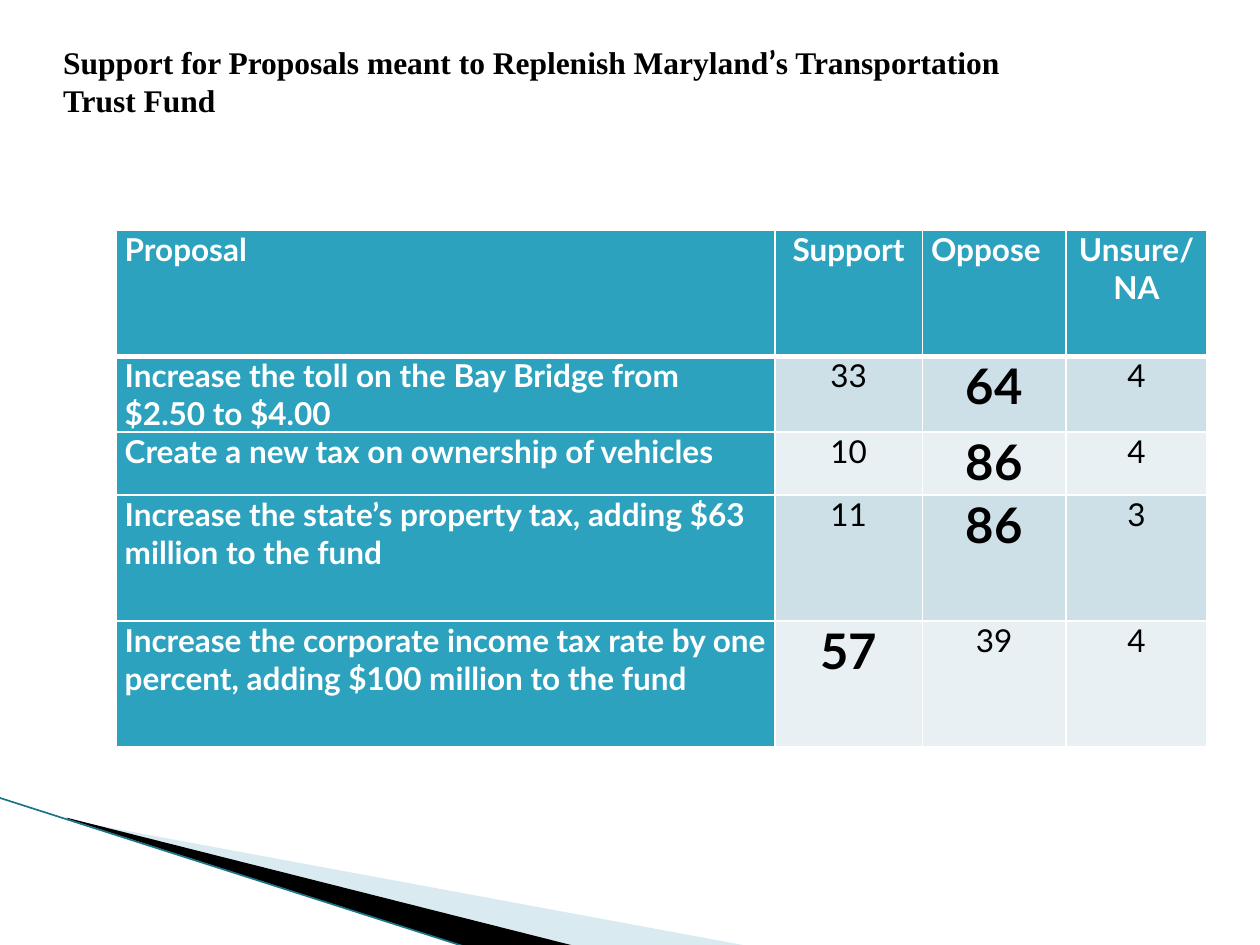
from lxml import etree
from pptx import Presentation
from pptx.dml.color import RGBColor
from pptx.enum.shapes import MSO_CONNECTOR as Connector
from pptx.enum.text import MSO_ANCHOR as Anchor, PP_ALIGN as Align
from pptx.oxml import parse_xml
from pptx.oxml.ns import nsdecls, qn
from pptx.util import Inches, Pt

WHITE = RGBColor(0xFF, 0xFF, 0xFF)
BLACK = RGBColor(0, 0, 0)
TEAL = RGBColor(0x2D, 0xA2, 0xBF)
DARK_TEAL = RGBColor(0x1B, 0x75, 0x87)
PALE_BLUE = RGBColor(0xA0, 0xCB, 0xDC)
BANDS = RGBColor(0xCD, 0xE0, 0xE8), RGBColor(0xE8, 0xF0, 0xF4)

HEADINGS = ("Proposal", "Support", "Oppose", "Unsure/NA")
PROPOSALS = (
    ("Increase the toll on the Bay Bridge from $2.50 to $4.00", 33, 64, 4),
    ("Create a new tax on ownership of vehicles", 10, 86, 4),
    ("Increase the state’s property tax, adding $63 million to the fund", 11, 86, 3),
    ("Increase the corporate income tax rate by one percent, adding $100 million to the fund",
     57, 39, 4),
)
COLUMN_WIDTHS = (5.23, 1.17, 1.14, 1.12)
ROW_HEIGHTS = (1, 0.5, 0.5, 1, 1)


def add_wedge(page, points, color, alpha=100):
    """Draw a closed outline through points in inches, alpha in percent."""
    corners = [(Inches(x), Inches(y)) for x, y in points]
    builder = page.shapes.build_freeform(*corners[0])
    builder.add_line_segments(corners[1:])
    wedge = builder.convert_to_shape()
    wedge.shadow.inherit = False
    wedge.fill.solid()
    wedge.fill.fore_color.rgb = color
    wedge.line.fill.background()
    if alpha < 100:
        tint = wedge.fill._xPr.find(".//" + qn("a:srgbClr"))
        etree.SubElement(tint, qn("a:alpha"), val=str(alpha * 1000))


def add_corner_decoration(page):
    add_wedge(page, [(0.55, 6.51), (5.95, 7.51), (4.56, 7.51), (0.55, 6.5)], PALE_BLUE, 40)
    add_wedge(page, [(0.53, 6.49), (4.57, 7.51), (3.72, 7.52), (0.54, 6.5)], BLACK)
    edge = page.shapes.add_connector(
        Connector.STRAIGHT, Inches(-0.01), Inches(6.33), Inches(3.71), Inches(7.52))
    edge.line.color.rgb = DARK_TEAL
    edge.line.width = Pt(0.95)
    etree.SubElement(edge._element.spPr, qn("a:effectLst"))


def add_title(page, left, top, width, height):
    box = page.shapes.add_textbox(left, top, width, height)
    frame = box.text_frame
    frame.word_wrap = True
    frame.vertical_anchor = Anchor.MIDDLE
    frame.margin_left = frame.margin_right = frame.margin_top = 0
    frame.margin_bottom = Inches(0.45)
    para = frame.paragraphs[0]
    para.font.size = Pt(18)
    para.font.bold = True
    para.font.color.rgb = BLACK
    for text, font in (
        ("Support for Proposals meant to Replenish Maryland", "Times New Roman"),
        ("’", "Lato"),
        ("s Transportation Trust Fund", "Times New Roman"),
    ):
        span = para.add_run()
        span.text = text
        span.font.name = font


def set_borders(cell, top, bottom):
    """Give the cell white borders; top and bottom are widths in points."""
    properties = cell._tc.get_or_add_tcPr()
    for side, width in (("L", 1), ("R", 1), ("T", top), ("B", bottom)):
        properties.append(parse_xml(
            f'<a:ln{side} {nsdecls("a")} w="{Pt(width)}"><a:solidFill>'
            f'<a:srgbClr val="{WHITE}"/></a:solidFill></a:ln{side}>'))


def fill_cell(cell, value, row, column):
    is_label = row == 0 or column == 0
    is_majority = not is_label and value > 50
    cell.margin_left = cell.margin_right = Inches(0.07)
    cell.margin_top = cell.margin_bottom = 0
    set_borders(cell, 3 if row == 1 else 1, 3 if row == 0 else 1)
    cell.fill.solid()
    cell.fill.fore_color.rgb = TEAL if is_label else BANDS[(row - 1) % 2]
    cell.text = str(value)
    para = cell.text_frame.paragraphs[0]
    left_aligned = column == 0 or value == "Oppose"
    para.alignment = Align.LEFT if left_aligned else Align.CENTER
    para.font.name = "Lato"
    para.font.size = Pt(28 if is_majority else 18)
    para.font.bold = is_label or is_majority
    para.font.color.rgb = WHITE if is_label else BLACK


def add_support_table(page, left, top):
    rows = (HEADINGS,) + PROPOSALS
    table = page.shapes.add_table(
        len(rows), len(HEADINGS), left, top,
        Inches(sum(COLUMN_WIDTHS)), Inches(sum(ROW_HEIGHTS))).table
    for column, width in zip(table.columns, COLUMN_WIDTHS):
        column.width = Inches(width)
    for line, height in zip(table.rows, ROW_HEIGHTS):
        line.height = Inches(height)
    for row, values in enumerate(rows):
        for column, value in enumerate(values):
            fill_cell(table.cell(row, column), value, row, column)


def main():
    deck = Presentation()
    deck.slide_width, deck.slide_height = Inches(10), Inches(7.5)
    page = deck.slides.add_slide(deck.slide_layouts[6])
    add_corner_decoration(page)
    add_support_table(page, Inches(0.92), Inches(1.83))
    add_title(page, Inches(0.5), Inches(0.33), Inches(7.75), Inches(1.08))
    deck.save("out.pptx")


if __name__ == "__main__":
    main()
